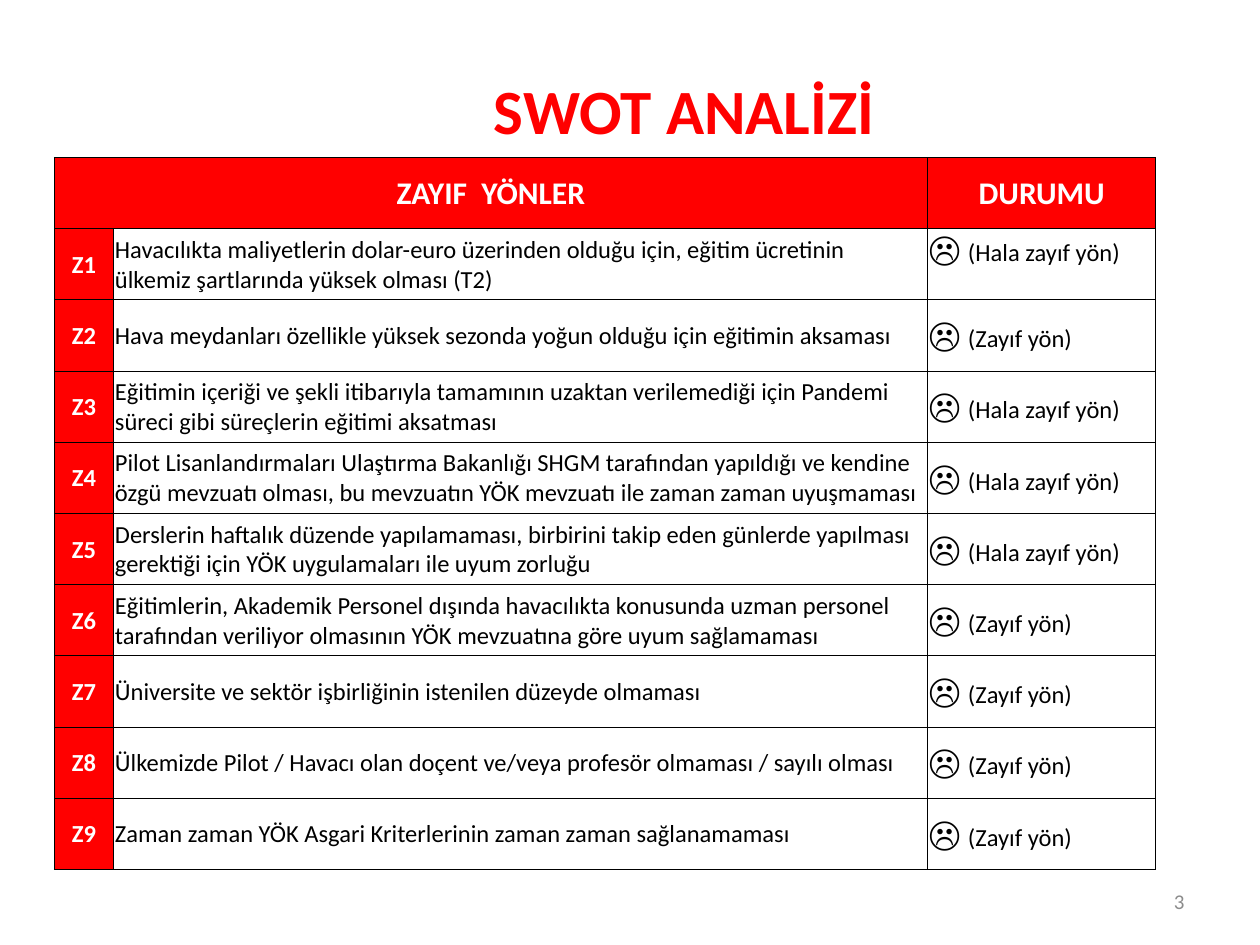
"""Build the SWOT weaknesses slide."""
from dataclasses import dataclass

import pptx
import pptx.dml.color
import pptx.enum.text
import pptx.oxml
import pptx.oxml.ns
import pptx.util

Pt = pptx.util.Pt
Align = pptx.enum.text.PP_ALIGN
Anchor = pptx.enum.text.MSO_ANCHOR
RED, WHITE, BLACK, GREY = "FF0000", "FFFFFF", "000000", "8C8C8C"
WEAK, STILL = "(Zayıf yön)", "(Hala zayıf yön)"


@dataclass
class Run:
    text: str
    size: float = 14
    color: str = BLACK
    bold: bool = False
    font: str = "Calibri"


@dataclass
class Point:
    text: str
    state: str


POINTS = [
    Point("Havacılıkta maliyetlerin dolar-euro üzerinden olduğu için, eğitim ücretinin "
          "ülkemiz şartlarında yüksek olması (T2)", STILL),
    Point("Hava meydanları özellikle yüksek sezonda yoğun olduğu için eğitimin aksaması", WEAK),
    Point("Eğitimin içeriği ve şekli itibarıyla tamamının uzaktan verilemediği için Pandemi "
          "süreci gibi süreçlerin eğitimi aksatması", STILL),
    Point("Pilot Lisanlandırmaları Ulaştırma Bakanlığı SHGM tarafından yapıldığı ve kendine "
          "özgü mevzuatı olması, bu mevzuatın YÖK mevzuatı ile zaman zaman uyuşmaması", STILL),
    Point("Derslerin haftalık düzende yapılamaması, birbirini takip eden günlerde yapılması "
          "gerektiği için YÖK uygulamaları ile uyum zorluğu", STILL),
    Point("Eğitimlerin, Akademik Personel dışında havacılıkta konusunda uzman personel "
          "tarafından veriliyor olmasının YÖK mevzuatına göre uyum sağlamaması", WEAK),
    Point("Üniversite ve sektör işbirliğinin istenilen düzeyde olmaması", WEAK),
    Point("Ülkemizde Pilot / Havacı olan doçent ve/veya profesör olmaması / sayılı olması", WEAK),
    Point("Zaman zaman YÖK Asgari Kriterlerinin zaman zaman sağlanamaması", WEAK),
]


def shade(code: str) -> pptx.dml.color.RGBColor:
    return pptx.dml.color.RGBColor.from_string(code)


def write(frame, runs: list[Run], align=Align.LEFT) -> None:
    frame.word_wrap = True
    para = frame.paragraphs[0]
    para.alignment = align
    for item in runs:
        run = para.add_run()
        run.text = item.text
        run.font.name = item.font
        run.font.size = Pt(item.size)
        run.font.bold = item.bold
        run.font.color.rgb = shade(item.color)


def edge(cell) -> None:
    props = cell._tc.get_or_add_tcPr()
    for side in "LRTB":
        props.append(pptx.oxml.parse_xml(
            f'<a:ln{side} {pptx.oxml.ns.nsdecls("a")} w="{Pt(0.5)}"><a:solidFill>'
            f'<a:srgbClr val="{BLACK}"/></a:solidFill></a:ln{side}>'))


def fill(cell, runs: list[Run], back: str = WHITE, align=Align.LEFT,
         anchor=Anchor.MIDDLE) -> None:
    cell.fill.solid()
    cell.fill.fore_color.rgb = shade(back)
    cell.vertical_anchor = anchor
    write(cell.text_frame, runs, align)


def place(shape, left: float, top: float, width: float, height: float) -> None:
    shape.left, shape.top = Pt(left), Pt(top)
    shape.width, shape.height = Pt(width), Pt(height)


def draw_title(slide) -> None:
    title = slide.shapes.title
    place(title, 116, 37.5, 550, 51)
    title.text_frame.vertical_anchor = Anchor.TOP
    write(title.text_frame, [Run("SWOT ANALİZİ", 36, RED, True)], Align.CENTER)


def draw_table(slide) -> None:
    widths, high = (34, 465, 130.5), 40.7
    count = len(POINTS) + 1
    table = slide.shapes.add_table(count, 3, Pt(31), Pt(90), Pt(sum(widths)),
                                   Pt(high * count)).table
    table.first_row = table.horz_banding = False
    for col, width in zip(table.columns, widths):
        col.width = Pt(width)
    for row in table.rows:
        row.height = Pt(high)
    for cell in table.iter_cells():
        cell.margin_left = cell.margin_right = cell.margin_top = Pt(0.7)
        cell.margin_bottom = 0
        edge(cell)
    table.cell(0, 0).merge(table.cell(0, 1))
    for col, text in ((0, "ZAYIF  YÖNLER"), (2, "DURUMU")):
        fill(table.cell(0, col), [Run(text, 18, WHITE, True)], RED, Align.CENTER)
    for row, point in enumerate(POINTS, 1):
        fill(table.cell(row, 0), [Run(f"Z{row}", 14, WHITE, True)], RED, Align.CENTER)
        fill(table.cell(row, 1), [Run(point.text)])
        mood = [Run("☹", 20, font="Arial"), Run(" ", 18), Run(point.state)]
        fill(table.cell(row, 2), mood, anchor=Anchor.TOP if row == 1 else Anchor.MIDDLE)


def draw_page(slide) -> None:
    box = slide.shapes.add_textbox(Pt(516), Pt(500.5), Pt(168), Pt(28.75))
    box.text_frame.vertical_anchor = Anchor.MIDDLE
    write(box.text_frame, [Run("3", 12, GREY)], Align.RIGHT)


def main() -> None:
    deck = pptx.Presentation()
    deck.slide_width, deck.slide_height = Pt(720), Pt(540)
    slide = deck.slides.add_slide(deck.slide_layouts[5])
    draw_page(slide)
    draw_title(slide)
    draw_table(slide)
    deck.save("out.pptx")


if __name__ == "__main__":
    main()
